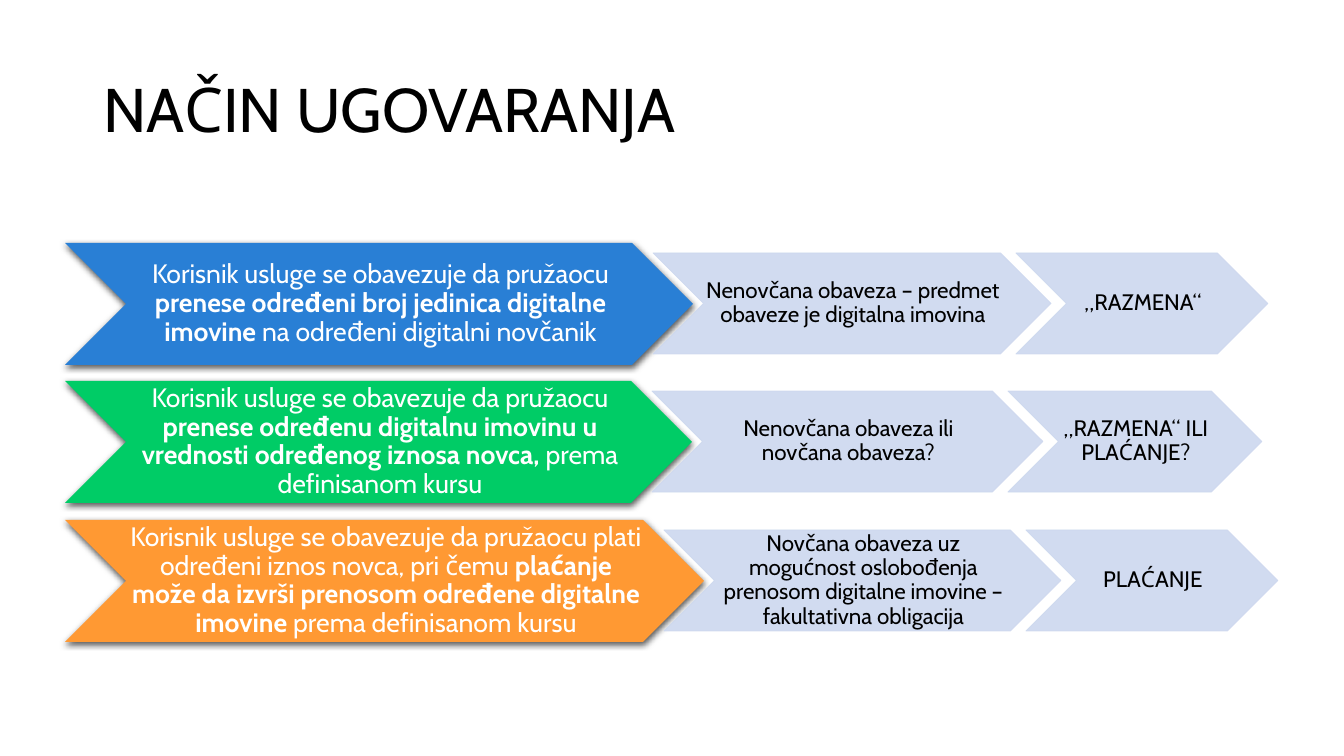
"""Build the slide on ways of contracting with digital assets."""
import lxml.etree
import pptx
import pptx.dml.color
import pptx.enum.shapes
import pptx.enum.text
import pptx.oxml.ns
import pptx.util

BLUE = pptx.dml.color.RGBColor(0x29, 0x7F, 0xD5)
GREEN = pptx.dml.color.RGBColor(0x00, 0xCC, 0x66)
ORANGE = pptx.dml.color.RGBColor(0xFF, 0x99, 0x33)
PALE = pptx.dml.color.RGBColor(0xCD, 0xD8, 0xEF)
WHITE = pptx.dml.color.RGBColor(0xFF, 0xFF, 0xFF)
BLACK = pptx.dml.color.RGBColor(0x00, 0x00, 0x00)

TITLE = "NAČIN UGOVARANJA"
ROWS = [
    {
        "top": 243, "color": BLUE, "widths": (628, 398, 252),
        "duty": ("Korisnik usluge se obavezuje da pružaocu ",
                 "prenese određeni broj jedinica digitalne imovine ",
                 "na određeni digitalni novčanik"),
        "results": ("Nenovčana obaveza – predmet obaveze je digitalna imovina",
                    "„RAZMENA“"),
    },
    {
        "top": 381, "color": GREEN, "widths": (627, 391, 254),
        "duty": ("Korisnik usluge se obavezuje da pružaocu ",
                 "prenese određenu digitalnu imovinu u vrednosti određenog iznosa novca,",
                 " prema definisanom kursu"),
        "results": ("Nenovčana obaveza ili novčana obaveza?",
                    "„RAZMENA“ ILI PLAĆANJE?"),
    },
    {
        "top": 520, "color": ORANGE, "widths": (639, 397, 252),
        "duty": ("Korisnik usluge se obavezuje da pružaocu plati određeni iznos novca, pri čemu ",
                 "plaćanje može da izvrši prenosom određene digitalne imovine ",
                 "prema definisanom kursu"),
        "results": ("Novčana obaveza uz mogućnost oslobođenja prenosom digitalne imovine – fakultativna obligacija",
                    "PLAĆANJE"),
    },
]
FONT = "Cabin"
PAGE_WIDTH, PAGE_HEIGHT = 1344, 756
LEFT = 65
DUTY_HEIGHT, RESULT_HEIGHT = 122, 101
OVERLAPS = (40, 35)


def px(length):
    """Turn pixels into EMU."""
    return pptx.util.Emu(round(length * 914400 / 100.8))


def write(frame, spans, size, color, align, insets=None):
    """Write one paragraph whose every second span is bold."""
    frame.word_wrap = True
    frame.auto_size = pptx.enum.text.MSO_AUTO_SIZE.NONE
    frame.vertical_anchor = pptx.enum.text.MSO_ANCHOR.MIDDLE
    if insets:
        frame.margin_left, frame.margin_top, frame.margin_right, frame.margin_bottom = map(px, insets)
    para = frame.paragraphs[0]
    para.alignment = align
    para.line_spacing = 0.9
    for index, text in enumerate(spans):
        span = para.add_run()
        span.text = text
        span.font.name = FONT
        span.font.size = pptx.util.Pt(size)
        span.font.bold = index % 2 == 1
        span.font.color.rgb = color


def add_chevron(page, left, top, width, height, color):
    """Add a plain chevron without outline or shadow."""
    chevron = page.shapes.add_shape(
        pptx.enum.shapes.MSO_SHAPE.CHEVRON, px(left), px(top), px(width), px(height))
    chevron.shadow.inherit = False
    chevron.fill.solid()
    chevron.fill.fore_color.rgb = color
    chevron.line.fill.background()
    return chevron


def add_alpha(color_element, percent):
    """Set the opacity of a colour element."""
    alpha = lxml.etree.SubElement(color_element, pptx.oxml.ns.qn("a:alpha"))
    alpha.set("val", str(percent * 1000))


def add_shadow(chevron):
    """Cast a soft shadow straight down."""
    effects = chevron.element.spPr.find(pptx.oxml.ns.qn("a:effectLst"))
    shadow = lxml.etree.SubElement(
        effects, pptx.oxml.ns.qn("a:outerShdw"), blurRad=str(pptx.util.Pt(4.5)),
        dist=str(pptx.util.Pt(1.5)), dir="5400000", algn="ctr", rotWithShape="0")
    color = lxml.etree.SubElement(shadow, pptx.oxml.ns.qn("a:srgbClr"), val=str(BLACK))
    add_alpha(color, 63)


def add_row(page, row):
    """Add a coloured duty chevron followed by its pale results."""
    center = pptx.enum.text.PP_ALIGN.CENTER
    duty_width, *result_widths = row["widths"]
    duty = add_chevron(page, LEFT, row["top"], duty_width, DUTY_HEIGHT, row["color"])
    add_shadow(duty)
    write(duty.text_frame, row["duty"], 19, WHITE, center, (3, 1, 0, 1))
    right = LEFT + duty_width
    top = row["top"] + (DUTY_HEIGHT - RESULT_HEIGHT) // 2
    for text, width, overlap in zip(row["results"], result_widths, OVERLAPS):
        left = right - overlap
        result = add_chevron(page, left, top, width, RESULT_HEIGHT, PALE)
        result.line.color.rgb = PALE
        result.line.width = pptx.util.Pt(0.5)
        for color in result.element.spPr.iter(pptx.oxml.ns.qn("a:srgbClr")):
            add_alpha(color, 90)
        write(result.text_frame, (text,), 16, BLACK, center, (2, 1, 0, 1))
        right = left + width


def main():
    """Build and save the deck."""
    deck = pptx.Presentation()
    deck.slide_width, deck.slide_height = px(PAGE_WIDTH), px(PAGE_HEIGHT)
    page = deck.slides.add_slide(deck.slide_layouts[5])
    title = page.shapes.title
    title.left, title.top, title.width, title.height = map(px, (93, 40, 1159, 146))
    write(title.text_frame, (TITLE,), 44, BLACK, pptx.enum.text.PP_ALIGN.LEFT)
    for row in ROWS:
        add_row(page, row)
    deck.save("out.pptx")


if __name__ == "__main__":
    main()
